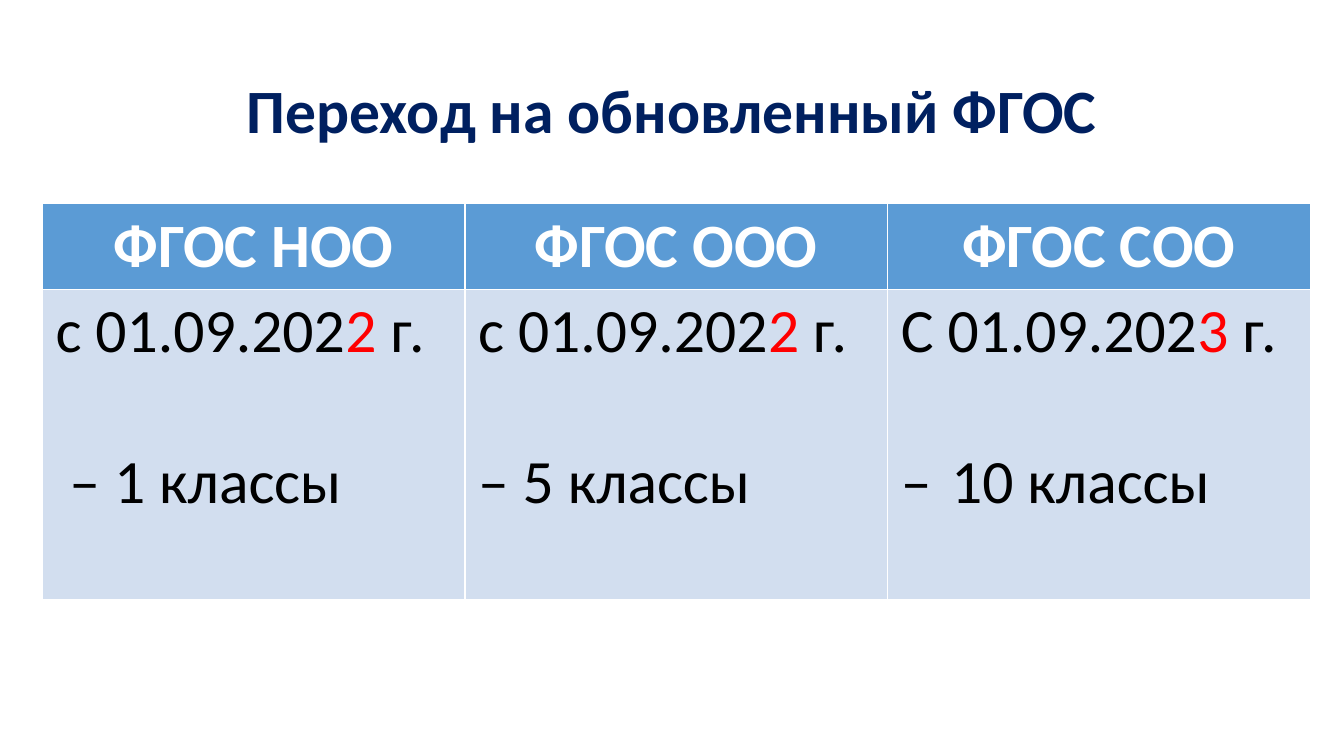
from lxml import etree
from pptx import Presentation
from pptx.dml.color import RGBColor
from pptx.enum.text import MSO_ANCHOR, MSO_AUTO_SIZE, PP_ALIGN
from pptx.oxml.ns import qn
from pptx.util import Cm, Pt

CENTER = PP_ALIGN.CENTER
LEFT = PP_ALIGN.LEFT
MIDDLE = MSO_ANCHOR.MIDDLE
NO_AUTOFIT = MSO_AUTO_SIZE.NONE

NAVY = RGBColor(0x00, 0x20, 0x60)
BLUE = RGBColor(0x5B, 0x9B, 0xD5)
PALE_BLUE = RGBColor(0xD2, 0xDE, 0xEF)
WHITE = RGBColor(0xFF, 0xFF, 0xFF)
BLACK = RGBColor(0x00, 0x00, 0x00)
RED = RGBColor(0xFF, 0x00, 0x00)

STANDARDS = [
    ("ФГОС НОО", "с 01.09.202", "2", "– 1 классы", Cm(0.35)),
    ("ФГОС ООО", "с 01.09.202", "2", "– 5 классы", Cm(0)),
    ("ФГОС СОО", "С 01.09.202", "3", "–\t10 классы", Cm(0)),
]


def add_run(paragraph, text, color, bold=False):
    run = paragraph.add_run()
    run.text = text
    run.font.name = "Calibri"
    run.font.size = Pt(44)
    run.font.bold = bold
    run.font.color.rgb = color


def fill_cell(cell, color):
    cell.fill.solid()
    cell.fill.fore_color.rgb = color
    cell.margin_left = cell.margin_right = Cm(0.33)
    cell.margin_top = cell.margin_bottom = Cm(0.13)


presentation = Presentation()
presentation.slide_width = Cm(33.87)
presentation.slide_height = Cm(19.05)
slide = presentation.slides.add_slide(presentation.slide_layouts[5])

title = slide.shapes.title
title.left, title.top, title.width, title.height = Cm(2.33), Cm(1.01), Cm(29.21), Cm(3.68)
title.text_frame.auto_size = NO_AUTOFIT
title.text_frame.vertical_anchor = MIDDLE
title_paragraph = title.text_frame.paragraphs[0]
title_paragraph.alignment = CENTER
title_paragraph.line_spacing = 0.9
add_run(title_paragraph, "Переход на обновленный ФГОС", NAVY, True)

table = slide.shapes.add_table(
    2, len(STANDARDS), Cm(1.07), Cm(5.13), Cm(31.95), Cm(9.94)
).table
table.rows[0].height = Cm(2.13)
table.rows[1].height = Cm(7.81)

for column, (name, date, year_digit, classes, indent) in enumerate(STANDARDS):
    header = table.cell(0, column)
    fill_cell(header, BLUE)
    header_paragraph = header.text_frame.paragraphs[0]
    header_paragraph.alignment = CENTER
    add_run(header_paragraph, name, WHITE, True)

    body = table.cell(1, column)
    fill_cell(body, PALE_BLUE)
    date_paragraph = body.text_frame.paragraphs[0]
    date_paragraph.alignment = LEFT
    add_run(date_paragraph, date, BLACK)
    add_run(date_paragraph, year_digit, RED)
    add_run(date_paragraph, " г.", BLACK)

    classes_paragraph = body.text_frame.add_paragraph()
    properties = classes_paragraph._p.get_or_add_pPr()
    properties.set("marL", str(indent))
    properties.set("indent", "0")
    tabs = etree.SubElement(properties, qn("a:tabLst"))
    etree.SubElement(tabs, qn("a:tab"), pos=str(Cm(1.47)), algn="l")
    classes_paragraph.alignment = LEFT
    classes_paragraph.space_before = Pt(53.7)
    add_run(classes_paragraph, classes, BLACK)

presentation.save("out.pptx")
